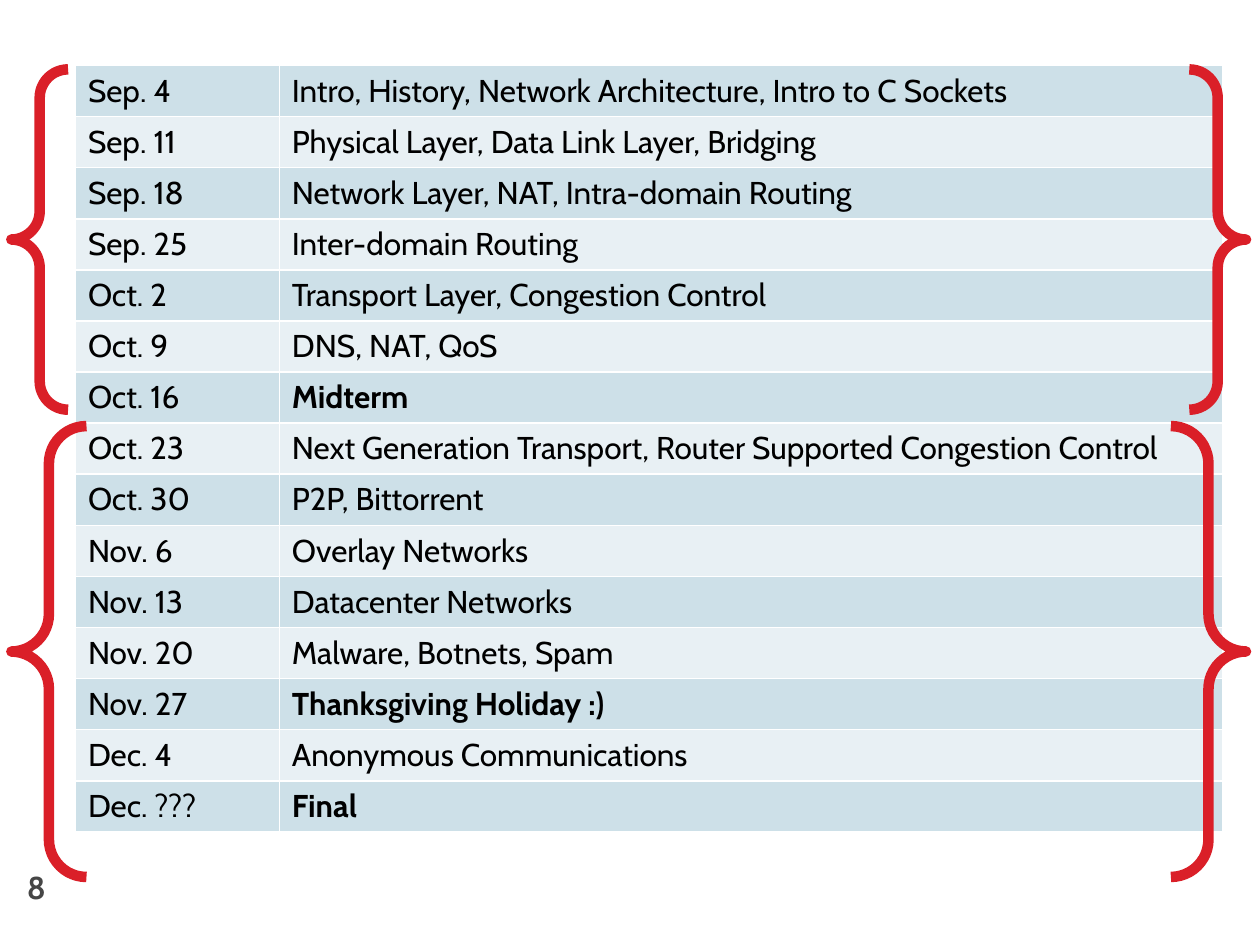
from dataclasses import dataclass

from lxml.etree import SubElement
from pptx import Presentation
from pptx.dml.color import RGBColor as Rgb
from pptx.enum.shapes import MSO_SHAPE as Preset
from pptx.enum.text import MSO_ANCHOR as Anchor, PP_ALIGN as Align
from pptx.oxml.ns import qn
from pptx.util import Cm, Pt


@dataclass(frozen=True)
class Theme:
    font: str = "Cabin"
    size: int = 18
    ink: str = "000000"
    page_number: str = "464646"
    bands: tuple = ("CDE0E8", "E8F0F4")
    border: str = "FFFFFF"
    border_width: int = 1
    brace: str = "DA1F28"
    brace_width: int = 6


THEME = Theme()

SCHEDULE = [
    ("Sep. 4", "Intro, History, Network Architecture, Intro to C Sockets"),
    ("Sep. 11", "Physical Layer, Data Link Layer, Bridging"),
    ("Sep. 18", "Network Layer, NAT, Intra-domain Routing"),
    ("Sep. 25", "Inter-domain Routing"),
    ("Oct. 2", "Transport Layer, Congestion Control"),
    ("Oct. 9", "DNS, NAT, QoS"),
    ("Oct. 16", "Midterm"),
    ("Oct. 23", "Next Generation Transport, Router Supported Congestion Control"),
    ("Oct. 30", "P2P, Bittorrent"),
    ("Nov. 6", "Overlay Networks"),
    ("Nov. 13", "Datacenter Networks"),
    ("Nov. 20", "Malware, Botnets, Spam"),
    ("Nov. 27", "Thanksgiving Holiday :)"),
    ("Dec. 4", "Anonymous Communications"),
    ("Dec. ???", "Final"),
]
MILESTONES = {"Midterm", "Thanksgiving Holiday :)", "Final"}
COLUMN_WIDTHS = (4.11, 19.02)
ROW_HEIGHT = 1.03


def write(frame, text, *, color=THEME.ink, bold=False, align=Align.LEFT):
    paragraph = frame.paragraphs[0]
    paragraph.alignment = align
    run = paragraph.add_run()
    run.text = text
    run.font.name = THEME.font
    run.font.size = Pt(THEME.size)
    run.font.bold = bold
    run.font.color.rgb = Rgb.from_string(color)


def add_borders(cell):
    properties = cell._tc.get_or_add_tcPr()
    for side in ("a:lnL", "a:lnR", "a:lnT", "a:lnB"):
        line = SubElement(properties, qn(side), w=str(Pt(THEME.border_width)))
        fill = SubElement(line, qn("a:solidFill"))
        SubElement(fill, qn("a:srgbClr"), val=THEME.border)


def add_schedule(slide, left, top):
    table = slide.shapes.add_table(
        len(SCHEDULE), len(COLUMN_WIDTHS), Cm(left), Cm(top),
        Cm(sum(COLUMN_WIDTHS)), Cm(ROW_HEIGHT * len(SCHEDULE))).table
    table.first_row = False
    for column, width in zip(table.columns, COLUMN_WIDTHS):
        column.width = Cm(width)
    for index, (row, entry) in enumerate(zip(table.rows, SCHEDULE)):
        row.height = Cm(ROW_HEIGHT)
        band = THEME.bands[index % len(THEME.bands)]
        for cell, text in zip(row.cells, entry):
            add_borders(cell)
            cell.fill.solid()
            cell.fill.fore_color.rgb = Rgb.from_string(band)
            write(cell.text_frame, text, bold=text in MILESTONES)


def add_brace_pair(slide, top, height):
    """Bracket one half of the term on both sides of the schedule."""
    braces = slide.shapes.add_shape(
        Preset.DOUBLE_BRACE, Cm(0.23), Cm(top), Cm(24.89), Cm(height))
    braces.shadow.inherit = False
    braces.fill.background()
    braces.line.color.rgb = Rgb.from_string(THEME.brace)
    braces.line.width = Pt(THEME.brace_width)


def add_page_number(slide, number):
    frame = slide.shapes.add_textbox(
        Cm(0), Cm(17.35), Cm(1.47), Cm(1.07)).text_frame
    frame.word_wrap = True
    frame.vertical_anchor = Anchor.MIDDLE
    write(frame, number, color=THEME.page_number, bold=True, align=Align.CENTER)


def main():
    deck = Presentation()
    deck.slide_width, deck.slide_height = Cm(25.4), Cm(19.05)
    slide = deck.slides.add_slide(deck.slide_layouts[6])
    add_page_number(slide, "8")
    add_schedule(slide, left=1.52, top=1.32)
    add_brace_pair(slide, top=1.4, height=6.86)
    add_brace_pair(slide, top=8.59, height=9.09)
    deck.save("out.pptx")


if __name__ == "__main__":
    main()
